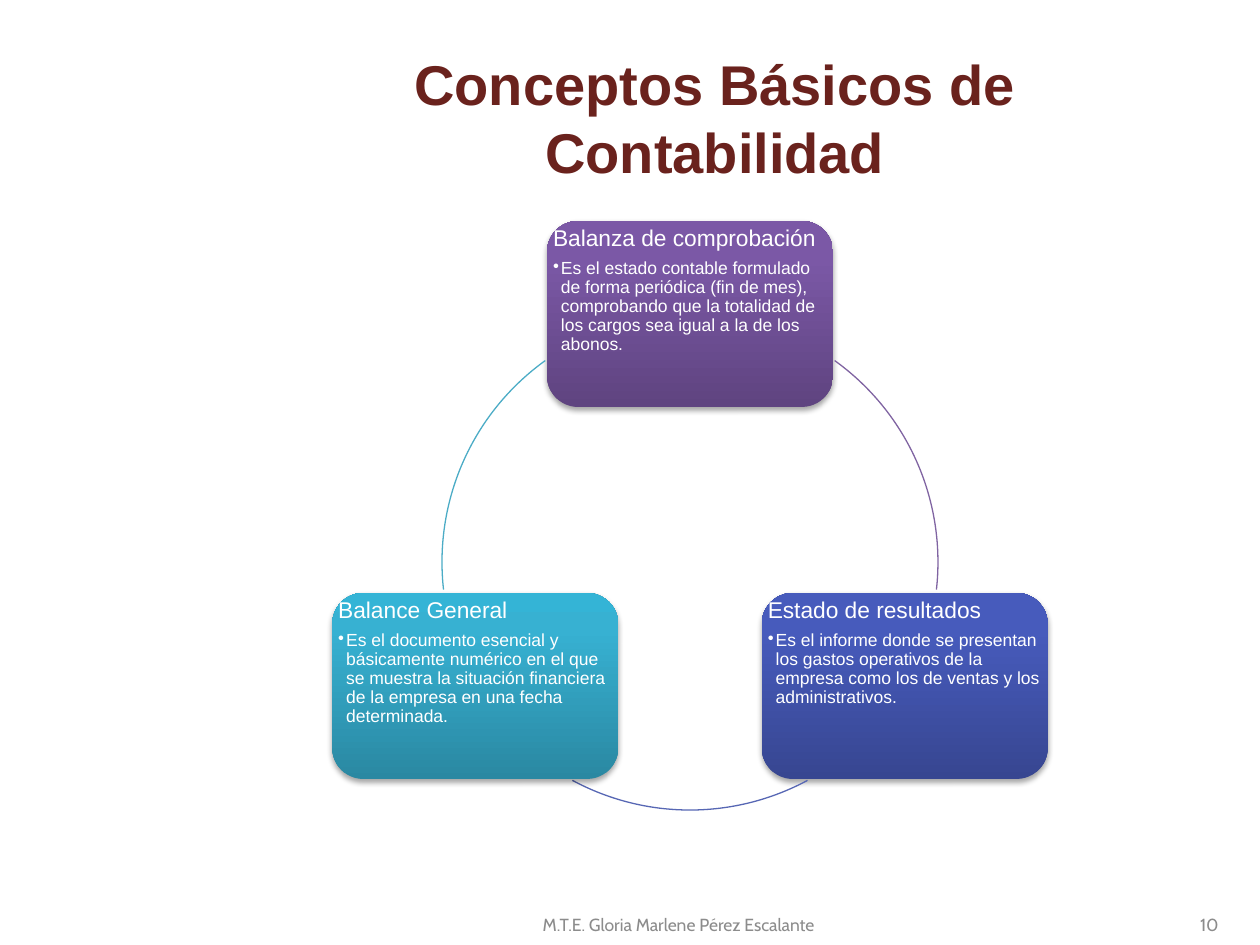
"""Build a slide with three accounting concepts arranged around a circle."""
from math import cos, radians, sin

from lxml import etree
from pptx import Presentation
from pptx.dml.color import RGBColor
from pptx.enum.shapes import MSO_SHAPE
from pptx.enum.text import MSO_ANCHOR, PP_ALIGN
from pptx.oxml import parse_xml
from pptx.oxml.ns import nsdecls, qn
from pptx.util import Emu, Pt

ROUNDED, ARC = MSO_SHAPE.ROUNDED_RECTANGLE, MSO_SHAPE.ARC
TOP, MIDDLE = MSO_ANCHOR.TOP, MSO_ANCHOR.MIDDLE
LEFT, CENTER, RIGHT = PP_ALIGN.LEFT, PP_ALIGN.CENTER, PP_ALIGN.RIGHT

THEME = {
    "title": {"size": 32, "color": "6A221D", "font": "Arial", "bold": True},
    "footer": {"size": 10, "color": "8C8C8C", "font": "Cabin"},
    "heading": {"size": 13, "color": "FFFFFF", "font": "Arial", "line_spacing": 0.9, "after": 4.55},
    "bullet": {"size": 10, "color": "FFFFFF", "font": "Arial", "line_spacing": 0.9, "after": 1.5, "bullet": True},
}
SCALE = 914400 / 126
CENTER_X, CENTER_Y, RADIUS = 690, 562, 248
CARD_WIDTH, CARD_HEIGHT, CARD_INSET, BULLET_INDENT = 286, 186, 6, 8
SHADOW = (
    f'<a:effectLst {nsdecls("a")}><a:outerShdw blurRad="{Pt(3.1)}" dist="{Pt(1.8)}" dir="5400000" '
    'rotWithShape="0"><a:srgbClr val="000000"><a:alpha val="35000"/></a:srgbClr></a:outerShdw></a:effectLst>'
)

CONCEPTS = [
    {
        "heading": "Balanza de comprobación",
        "text": "Es el estado contable formulado de forma periódica (fin de mes), comprobando que la "
                "totalidad de los cargos sea igual a la de los abonos.",
        "angle": 270, "gradient": ("5F4480", "7B58A6", "7C57A8"),
        "arc": (305.7, 6.4), "line": "8064A2",
    },
    {
        "heading": "Estado de resultados",
        "text": "Es el informe donde se presentan los gastos operativos de la empresa como los de "
                "ventas y los administrativos.",
        "angle": 30, "gradient": ("374691", "475BBC", "455ABF"),
        "arc": (61.7, 118.3), "line": "5767B4",
    },
    {
        "heading": "Balance General",
        "text": "Es el documento esencial y básicamente numérico en el que se muestra la situación "
                "financiera de la empresa en una fecha determinada.",
        "angle": 150, "gradient": ("2A88A2", "37B1D2", "34B4D6"),
        "arc": (173.6, 234.3), "line": "4BACC6",
    },
]


def px(*lengths):
    return [Emu(round(length * SCALE)) for length in lengths]


def write_text(frame, text, *, size, color, font, bold=False, align=LEFT, anchor=TOP,
               line_spacing=None, after=0, bullet=False):
    frame.word_wrap = True
    frame.vertical_anchor = anchor
    paragraph = frame.add_paragraph() if frame.text else frame.paragraphs[0]
    if bullet:
        properties = paragraph._p.get_or_add_pPr()
        indent, = px(BULLET_INDENT)
        properties.set("marL", str(indent))
        properties.set("indent", str(-indent))
        etree.SubElement(properties, qn("a:buChar")).set("char", "•")
    paragraph.alignment = align
    paragraph.line_spacing = line_spacing
    paragraph.space_after = Pt(after)
    run = paragraph.add_run()
    run.text = text
    run.font.size = Pt(size)
    run.font.name = font
    run.font.bold = bold
    run.font.color.rgb = RGBColor.from_string(color)


presentation = Presentation()
presentation.slide_width, presentation.slide_height = px(1260, 945)
slide = presentation.slides.add_slide(presentation.slide_layouts[6])

for text, bounds, style, align in [
    ("Conceptos Básicos de Contabilidad", (233, 38, 964, 158), "title", CENTER),
    ("M.T.E. Gloria Marlene Pérez Escalante", (479, 900, 399, 50), "footer", CENTER),
    ("10", (937, 900, 294, 50), "footer", RIGHT),
]:
    box = slide.shapes.add_textbox(*px(*bounds))
    write_text(box.text_frame, text, align=align, anchor=MIDDLE, **THEME[style])

for concept in CONCEPTS:
    angle = radians(concept["angle"])
    bounds = px(
        CENTER_X + RADIUS * cos(angle) - CARD_WIDTH / 2,
        CENTER_Y + RADIUS * sin(angle) - CARD_HEIGHT / 2,
        CARD_WIDTH, CARD_HEIGHT,
    )
    card = slide.shapes.add_shape(ROUNDED, *bounds)
    card.line.fill.background()
    stops = "".join(
        f'<a:gs pos="{position * 1000}"><a:srgbClr val="{color}"/></a:gs>'
        for position, color in zip((0, 80, 100), concept["gradient"])
    )
    card_properties = card._element.spPr
    card_properties.find(qn("a:prstGeom")).addnext(parse_xml(
        f'<a:gradFill {nsdecls("a")} rotWithShape="1"><a:gsLst>{stops}</a:gsLst>'
        '<a:lin ang="16200000" scaled="0"/></a:gradFill>'
    ))
    card_properties.append(parse_xml(SHADOW))

    box = slide.shapes.add_textbox(*bounds)
    frame = box.text_frame
    frame.margin_left, frame.margin_top, frame.margin_right, frame.margin_bottom = px(*[CARD_INSET] * 4)
    write_text(frame, concept["heading"], **THEME["heading"])
    write_text(frame, concept["text"], **THEME["bullet"])

    arc = slide.shapes.add_shape(
        ARC, *px(CENTER_X - RADIUS, CENTER_Y - RADIUS, 2 * RADIUS, 2 * RADIUS)
    )
    arc.shadow.inherit = False
    arc.fill.background()
    arc.line.color.rgb = RGBColor.from_string(concept["line"])
    arc.line.width = Pt(0.75)
    for index, degrees in enumerate(concept["arc"]):
        arc.adjustments[index] = degrees * 0.6

presentation.save("out.pptx")
